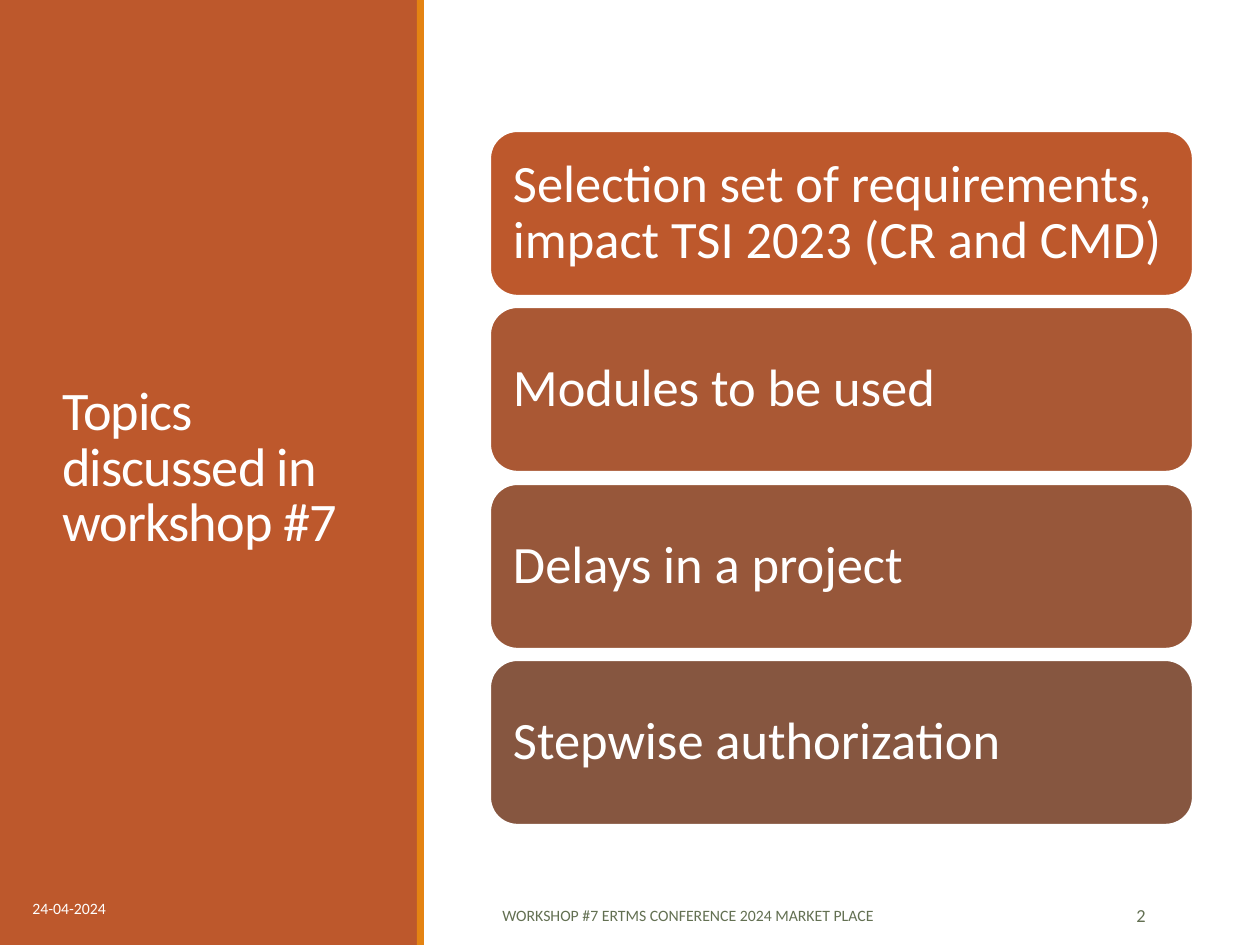
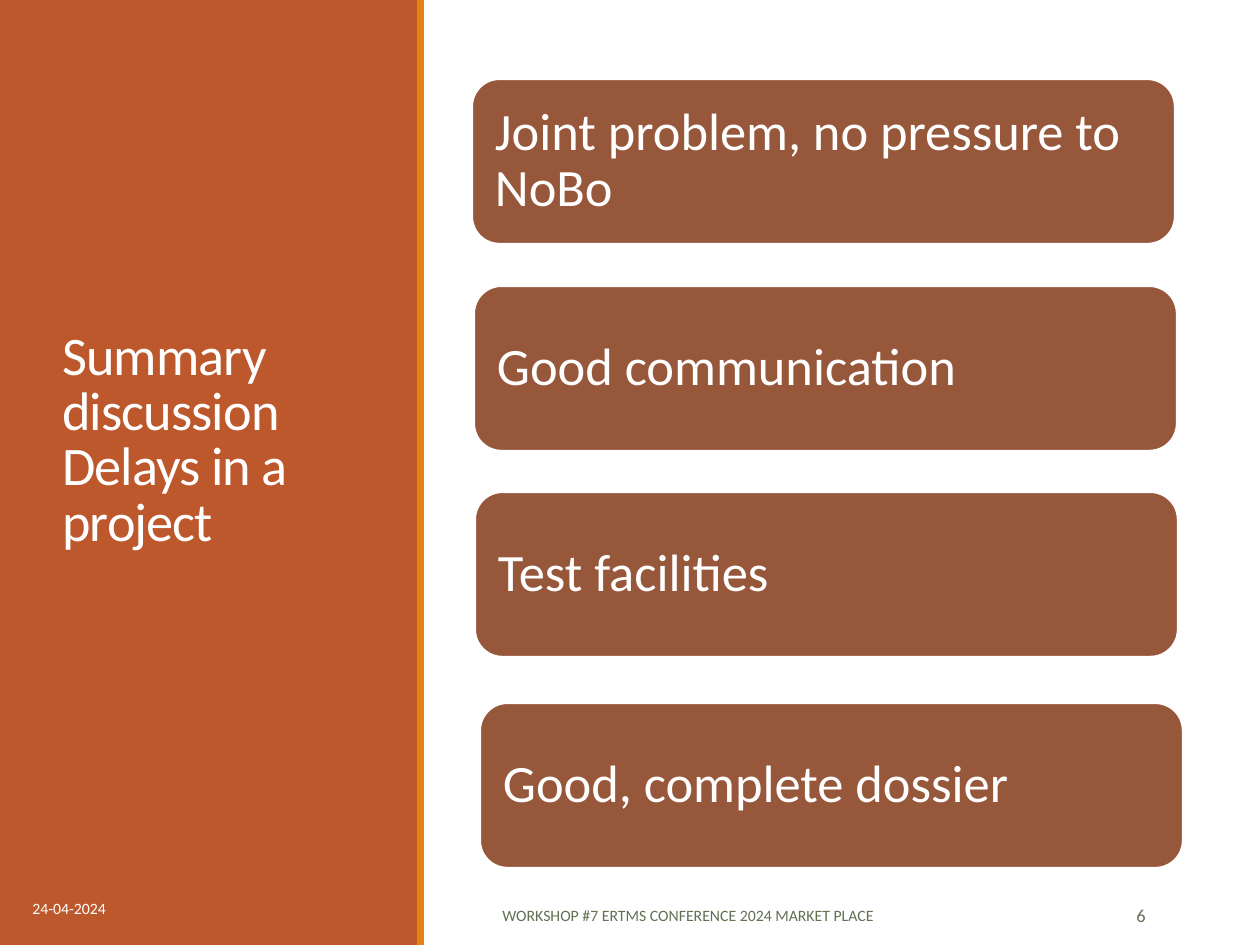
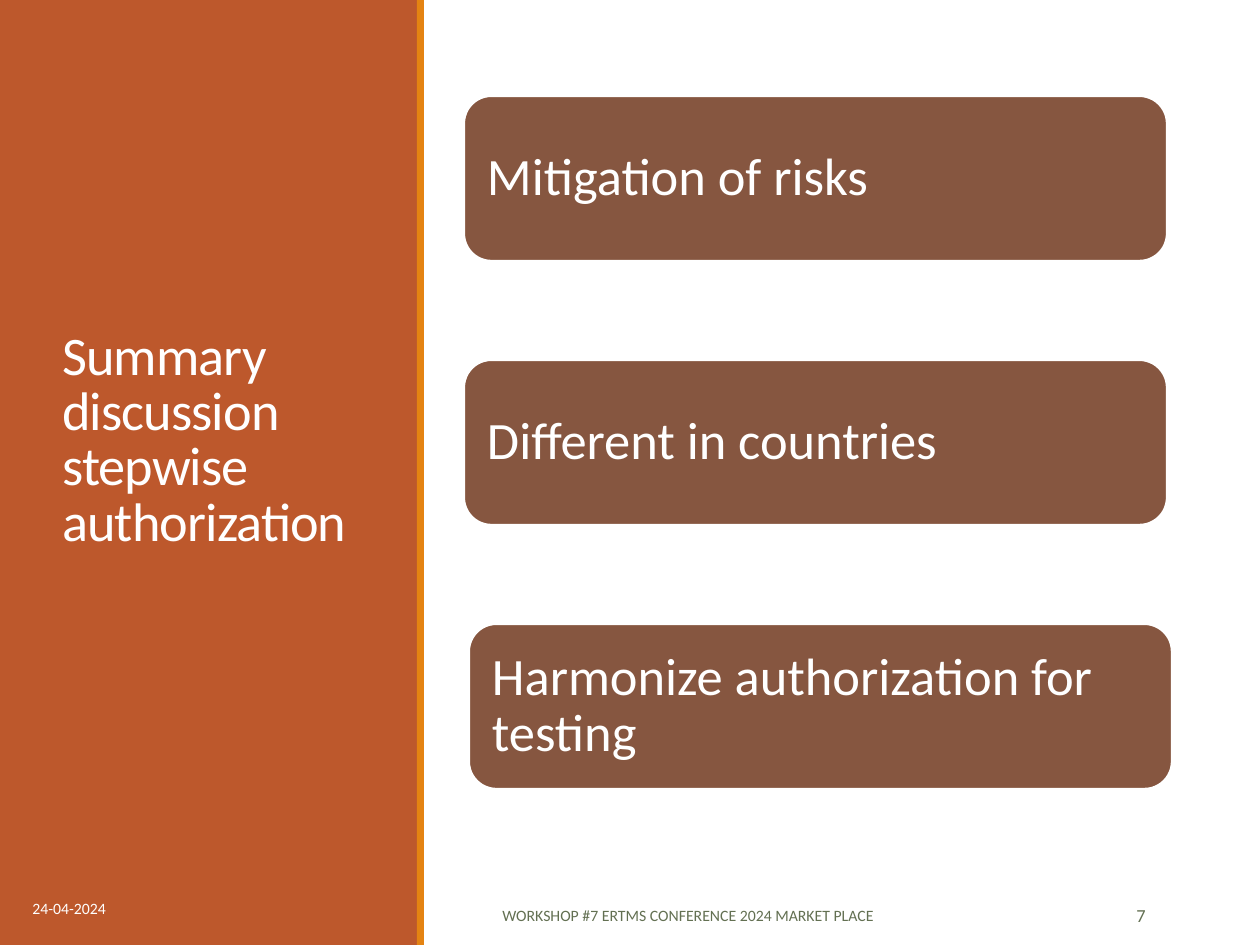
from pptx import Presentation, util as u
from pptx.dml.color import RGBColor
from pptx.enum import shapes, text

COLORS = {
    "rust": "BD582C", "amber": "E48312", "white": "FFFFFF", "moss": "637052",
    "sienna": "AA5834", "clay": "97573A", "umber": "865640",
}
FONT = "Calibri"
CARD_WIDTH, CARD_HEIGHT, CARD_INSET = 703, 165, 15


def px(length):
    return u.Emu(round(length * 914400 / 126))


def write(shape, words, size, color, align=text.PP_ALIGN.LEFT, spacing=1.0):
    frame = shape.text_frame
    frame.text = words
    frame.word_wrap = True
    frame.vertical_anchor = text.MSO_ANCHOR.MIDDLE
    paragraph = frame.paragraphs[0]
    paragraph.alignment = align
    paragraph.line_spacing = spacing
    font = paragraph.runs[0].font
    font.name = FONT
    font.size = u.Pt(size)
    font.color.rgb = RGBColor.from_string(COLORS[color])
    return paragraph


topics = [
    ("Topics discussed in workshop #7", 72, "2", [
        ("Selection set of requirements, impact TSI 2023 (CR and CMD)", 490, 131, "rust"),
        ("Modules to be used", 490, 307, "sienna"),
        ("Delays in a project", 490, 484, "clay"),
        ("Stepwise authorization", 490, 660, "umber"),
    ]),
    ("Summary discussion Delays in a project", 44, "6", [
        ("Joint problem, no pressure to NoBo", 472, 79, "clay"),
        ("Good communication", 474, 286, "clay"),
        ("Test facilities", 475, 492, "clay"),
        ("Good, complete dossier", 480, 703, "clay"),
    ]),
    ("Summary discussion stepwise authorization", 44, "7", [
        ("Mitigation of risks", 464, 96, "umber"),
        ("Different in countries", 464, 360, "umber"),
        ("Harmonize authorization for testing", 469, 624, "umber"),
    ]),
]

deck = Presentation()
deck.slide_width, deck.slide_height = px(1260), px(945)

for heading, heading_top, number, cards in topics:
    slide = deck.slides.add_slide(deck.slide_layouts[6])

    for left, width, color in [(0, 418, "rust"), (417, 7, "amber")]:
        band = slide.shapes.add_shape(
            shapes.MSO_SHAPE.RECTANGLE, px(left), 0, px(width), px(945))
        band.shadow.inherit = False
        band.fill.solid()
        band.fill.fore_color.rgb = RGBColor.from_string(COLORS[color])
        band.line.fill.background()

    title = slide.shapes.add_textbox(px(50), px(heading_top), px(319), px(795))
    title_line = write(title, heading, 31, "white", spacing=0.85)
    title_line.runs[0].font._element.set("spc", "-50")

    for words, left, top, width, size, color, align in [
        ("WORKSHOP #7 ERTMS CONFERENCE 2024 MARKET PLACE",
         490, 890, 528, 9, "moss", text.PP_ALIGN.LEFT),
        (number, 1046, 890, 112, 10.5, "moss", text.PP_ALIGN.RIGHT),
        ("24-04-2024", 20, 883, 256, 9, "white", text.PP_ALIGN.LEFT),
    ]:
        footer = slide.shapes.add_textbox(px(left), px(top), px(width), px(50))
        write(footer, words, size, color, align)

    for topic, left, top, color in cards:
        card = slide.shapes.add_shape(
            shapes.MSO_SHAPE.ROUNDED_RECTANGLE,
            px(left), px(top), px(CARD_WIDTH), px(CARD_HEIGHT))
        card.shadow.inherit = False
        card.fill.solid()
        card.fill.fore_color.rgb = RGBColor.from_string(COLORS[color])
        card.line.color.rgb = RGBColor.from_string(COLORS["white"])
        card.line.width = u.Pt(1.25)
        write(card, topic, 30, "white", spacing=0.9)
        card.text_frame.margin_left = card.text_frame.margin_right = px(CARD_INSET)

deck.save("out.pptx")
